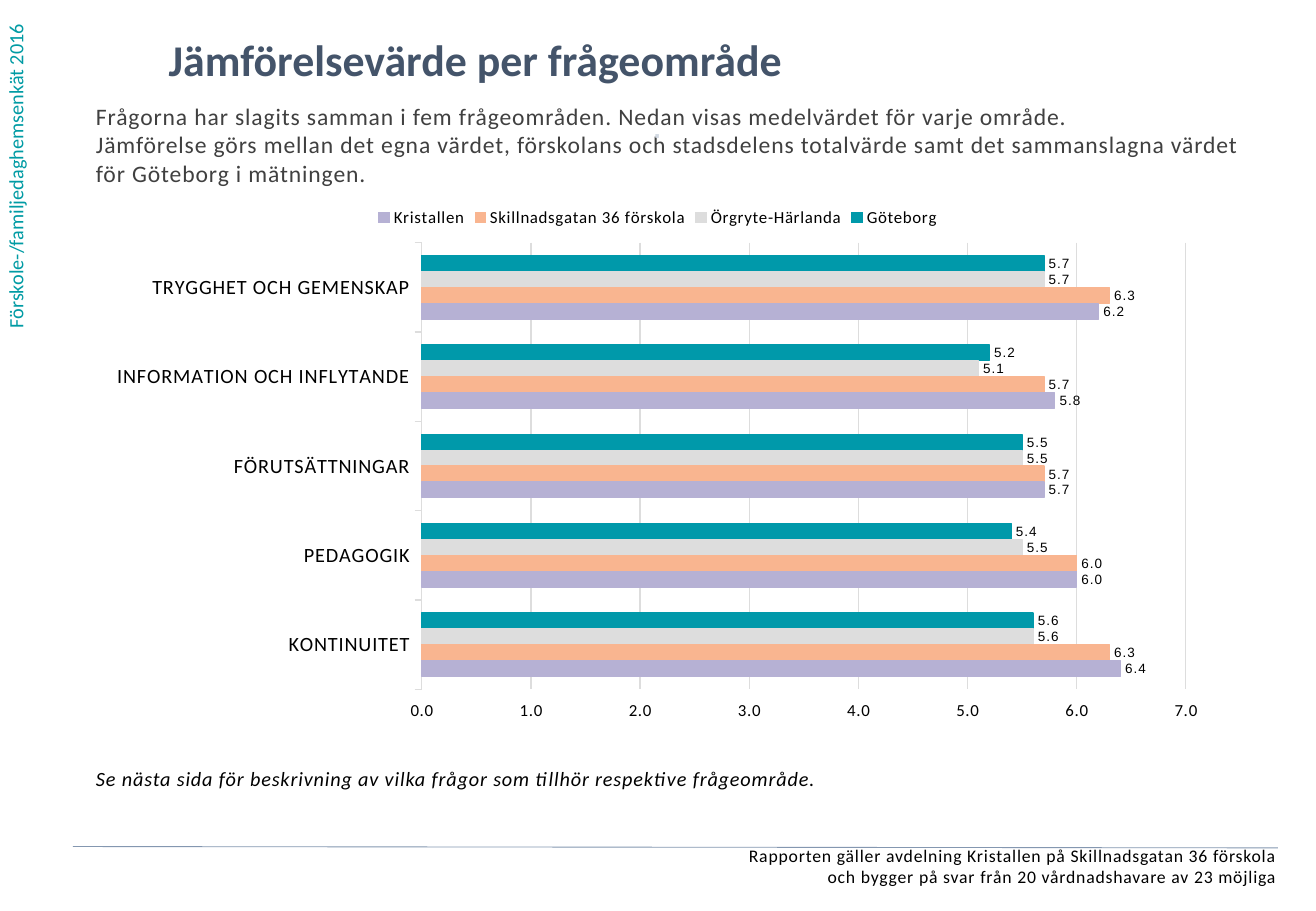
from dataclasses import dataclass

from lxml.etree import SubElement
from pptx import Presentation
from pptx.chart.data import CategoryChartData
from pptx.dml.color import RGBColor
from pptx.enum.chart import XL_CHART_TYPE as ChartType
from pptx.enum.chart import XL_LABEL_POSITION as LabelPosition
from pptx.enum.chart import XL_LEGEND_POSITION as LegendPosition
from pptx.enum.chart import XL_TICK_LABEL_POSITION as TickLabelPosition
from pptx.enum.chart import XL_TICK_MARK as TickMark
from pptx.enum.shapes import MSO_CONNECTOR as Connector
from pptx.enum.text import PP_ALIGN as Align
from pptx.oxml.ns import qn
from pptx.slide import Slide
from pptx.util import Pt

TEAL_TEXT = RGBColor(0x00, 0x9B, 0xA4)
NAVY = RGBColor(0x44, 0x54, 0x6A)
DARK_GREY = RGBColor(0x40, 0x40, 0x40)
BLACK = RGBColor(0x00, 0x00, 0x00)
PALE_BLUE = RGBColor(0xD2, 0xD9, 0xE2)
RULE_BLUE = RGBColor(0x84, 0x97, 0xB0)
LIGHT_GREY = RGBColor(0xDD, 0xDD, 0xDD)
TEAL = RGBColor(0x00, 0x99, 0xAA)
PEACH = RGBColor(0xF9, 0xB5, 0x90)
LILAC = RGBColor(0xB6, 0xB1, 0xD4)

FONT = "Calibri"
LABEL_FONT = "Arial"
NUMBER_FORMAT = "0.0;0.0"
SPACING = "50"


@dataclass(frozen=True)
class Box:
    left: float
    top: float
    width: float
    height: float


@dataclass(frozen=True)
class TextBlock:
    box: Box
    lines: tuple[str, ...]
    size: float
    color: RGBColor
    bold: bool = False
    italic: bool = False
    spaced: bool = True
    align: Align = Align.LEFT
    inset_left: float = 0
    inset_top: float = 0
    upward: bool = False


@dataclass(frozen=True)
class Series:
    name: str
    values: tuple[float, ...]
    color: RGBColor


TEXT_BLOCKS = (
    TextBlock(Box(-1.6, 0, 28.8, 194.6), ("Förskole-/familjedaghemsenkät 2016",),
              12, TEAL_TEXT, spaced=False, inset_left=7.2, inset_top=2.2, upward=True),
    TextBlock(Box(100, 19.4, 600.5, 41), ("Jämförelsevärde per frågeområde",),
              26, NAVY, bold=True, spaced=False),
    TextBlock(Box(56.9, 60.3, 681, 72.7), (
        "Frågorna har slagits samman i fem frågeområden. Nedan visas medelvärdet för varje område.",
        "Jämförelse görs mellan det egna värdet, förskolans och stadsdelens totalvärde samt "
        "det sammanslagna värdet för Göteborg i mätningen.",
    ), 14, DARK_GREY),
    TextBlock(Box(8.6, 500.5, 748.2, 31), (
        "Rapporten gäller avdelning Kristallen på Skillnadsgatan 36 förskola",
        "och bygger på svar från 20 vårdnadshavare av 23 möjliga",
    ), 10.5, BLACK, align=Align.RIGHT),
    TextBlock(Box(278.6, 73.4, 221.8, 28), ("⋅",), 12, PALE_BLUE, bold=True, align=Align.CENTER),
    TextBlock(Box(56.9, 434.2, 666, 60), (
        "Se nästa sida för beskrivning av vilka frågor som tillhör respektive frågeområde.",
    ), 12, BLACK, italic=True, inset_top=25.6),
)

CHART_BOX = Box(56.9, 115.2, 666, 319)
PLOT_LAYOUT = {"x": 0.29, "y": 0.09, "w": 0.68, "h": 0.83}
AREAS = ("TRYGGHET OCH GEMENSKAP", "INFORMATION OCH INFLYTANDE", "FÖRUTSÄTTNINGAR",
         "PEDAGOGIK", "KONTINUITET")
SERIES = (
    Series("Göteborg", (5.7, 5.2, 5.5, 5.4, 5.6), TEAL),
    Series("Örgryte-Härlanda", (5.7, 5.1, 5.5, 5.5, 5.6), LIGHT_GREY),
    Series("Skillnadsgatan 36 förskola", (6.3, 5.7, 5.7, 6.0, 6.3), PEACH),
    Series("Kristallen", (6.2, 5.8, 5.7, 6.0, 6.4), LILAC),
)


def add_text(slide: Slide, block: TextBlock) -> None:
    box = block.box
    shape = slide.shapes.add_textbox(Pt(box.left), Pt(box.top), Pt(box.width), Pt(box.height))
    frame = shape.text_frame
    frame.word_wrap = True
    frame.margin_left, frame.margin_top = Pt(block.inset_left), Pt(block.inset_top)
    frame.margin_right = frame.margin_bottom = 0
    if block.upward:
        next(shape.element.iter(qn("a:bodyPr"))).set("vert", "vert270")
    for index, line in enumerate(block.lines):
        paragraph = frame.add_paragraph() if index else frame.paragraphs[0]
        paragraph.alignment = block.align
        run = paragraph.add_run()
        run.text = line
        run.font.name = FONT
        run.font.size = Pt(block.size)
        run.font.bold = block.bold
        run.font.italic = block.italic
        run.font.color.rgb = block.color
    if block.spaced:
        for properties in shape.element.iter(qn("a:rPr")):
            properties.set("spc", SPACING)


def set_plot_layout(chart_element) -> None:
    plot_area = next(chart_element.iter(qn("c:plotArea")))
    layout = plot_area.find(qn("c:layout"))
    if layout is None:
        layout = SubElement(plot_area, qn("c:layout"))
        plot_area.insert(0, layout)
    manual = SubElement(layout, qn("c:manualLayout"))
    settings = {"layoutTarget": "inner", "xMode": "edge", "yMode": "edge", **PLOT_LAYOUT}
    for tag, value in settings.items():
        SubElement(manual, qn(f"c:{tag}")).set("val", str(value))


def add_area_chart(slide: Slide) -> None:
    data = CategoryChartData(number_format="0.0")
    data.categories = AREAS
    for series in SERIES:
        data.add_series(series.name, series.values)
    box = CHART_BOX
    chart = slide.shapes.add_chart(ChartType.BAR_CLUSTERED, Pt(box.left), Pt(box.top),
                                   Pt(box.width), Pt(box.height), data).chart
    chart.has_title = False
    chart.font.name, chart.font.size = FONT, Pt(10)
    chart.font.color.rgb = BLACK
    chart.has_legend = True
    chart.legend.position = LegendPosition.TOP
    chart.legend.include_in_layout = False
    chart.legend.font.size = Pt(10)

    category_axis = chart.category_axis
    category_axis.reverse_order = True
    category_axis.major_tick_mark = TickMark.OUTSIDE
    category_axis.tick_labels.font.size = Pt(12)
    value_axis = chart.value_axis
    value_axis.minimum_scale, value_axis.maximum_scale = 0, 7
    value_axis.major_unit = 1
    value_axis.major_tick_mark = TickMark.OUTSIDE
    value_axis.tick_label_position = TickLabelPosition.HIGH
    value_axis.tick_labels.number_format = NUMBER_FORMAT
    value_axis.tick_labels.number_format_is_linked = False
    value_axis.tick_labels.font.size = Pt(10)
    value_axis.format.line.fill.background()
    for line in (category_axis.format.line, value_axis.major_gridlines.format.line):
        line.color.rgb, line.width = LIGHT_GREY, Pt(0.75)

    plot = chart.plots[0]
    plot.gap_width, plot.overlap = 162, 0
    plot.vary_by_categories = False
    for series, bars in zip(SERIES, plot.series):
        bars.format.fill.solid()
        bars.format.fill.fore_color.rgb = series.color
        bars.format.line.color.rgb, bars.format.line.width = series.color, Pt(0.75)
        labels = bars.data_labels
        labels.show_value = True
        labels.position = LabelPosition.OUTSIDE_END
        labels.number_format = NUMBER_FORMAT
        labels.number_format_is_linked = False
        labels.font.name, labels.font.size = LABEL_FONT, Pt(8)
    for properties in chart.element.iter(qn("a:defRPr")):
        properties.set("spc", SPACING)
    set_plot_layout(chart.element)


def add_footer_rule(slide: Slide) -> None:
    rule = slide.shapes.add_connector(Connector.STRAIGHT, Pt(43.2), Pt(501.8), Pt(757.4), Pt(502.6))
    rule.line.color.rgb, rule.line.width = RULE_BLUE, Pt(0.5)
    SubElement(rule.element.spPr, qn("a:effectLst"))


def main() -> None:
    presentation = Presentation()
    presentation.slide_width, presentation.slide_height = Pt(780), Pt(540)
    slide = presentation.slides.add_slide(presentation.slide_layouts[6])
    for block in TEXT_BLOCKS:
        add_text(slide, block)
    add_area_chart(slide)
    add_footer_rule(slide)
    presentation.save("out.pptx")


if __name__ == "__main__":
    main()
